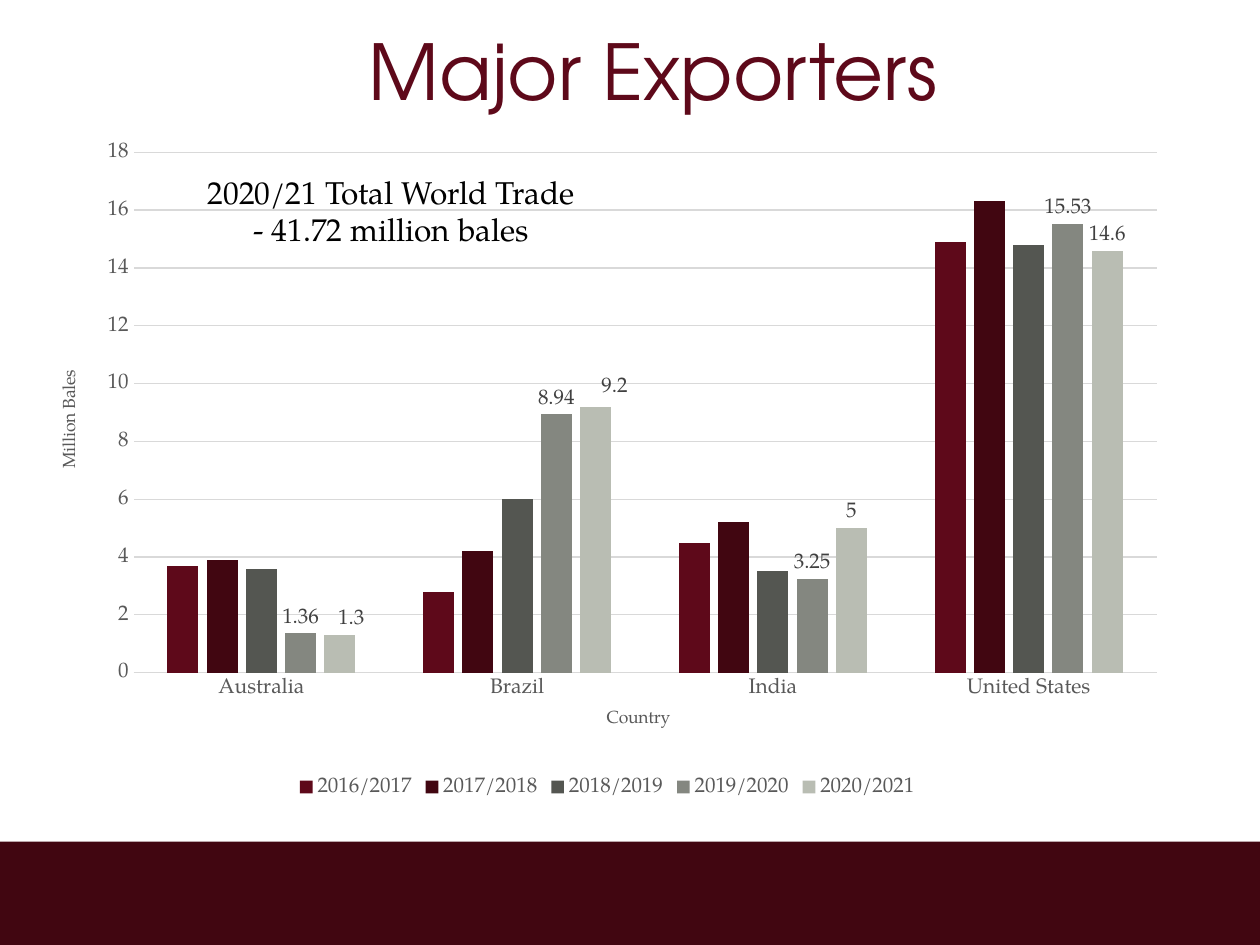
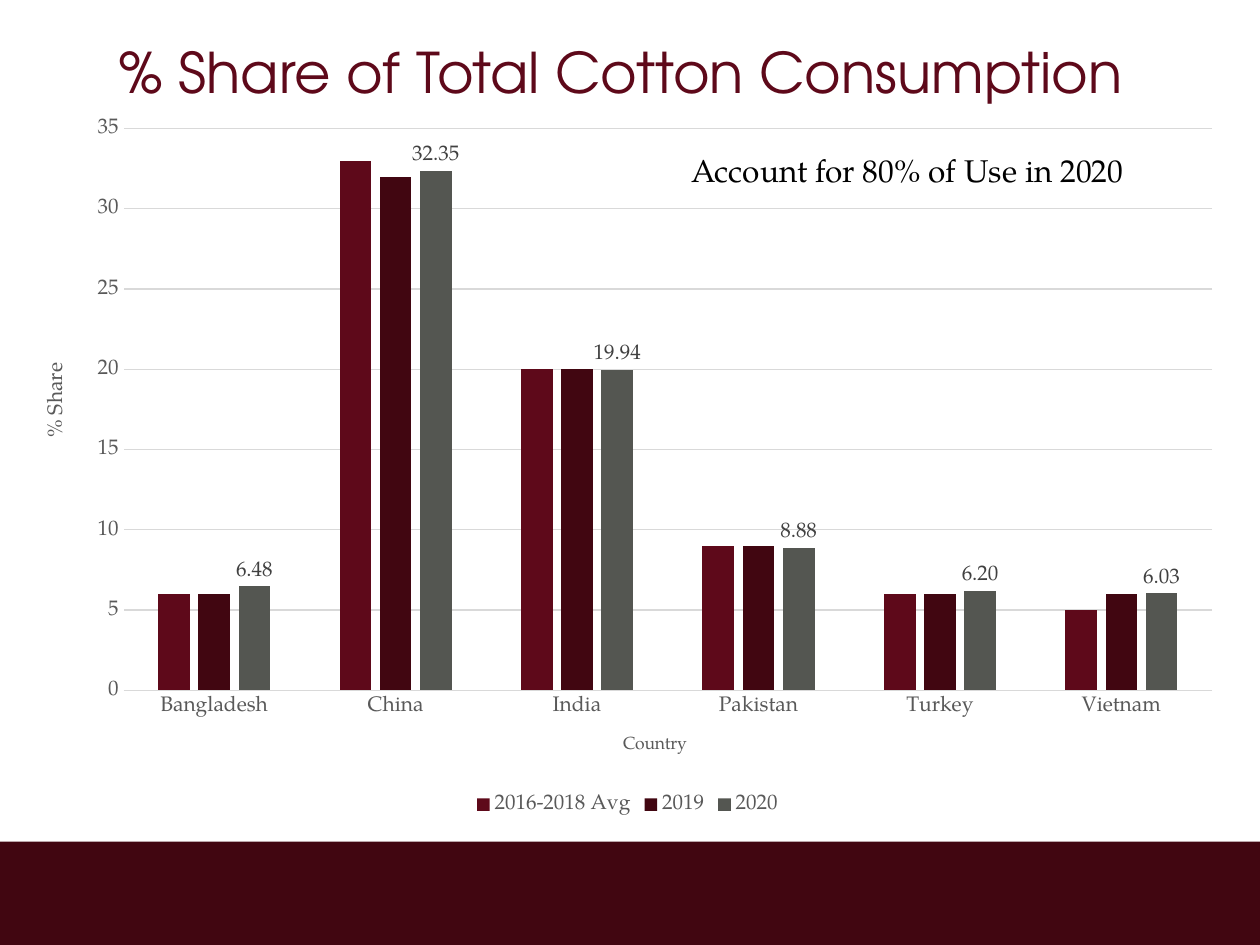
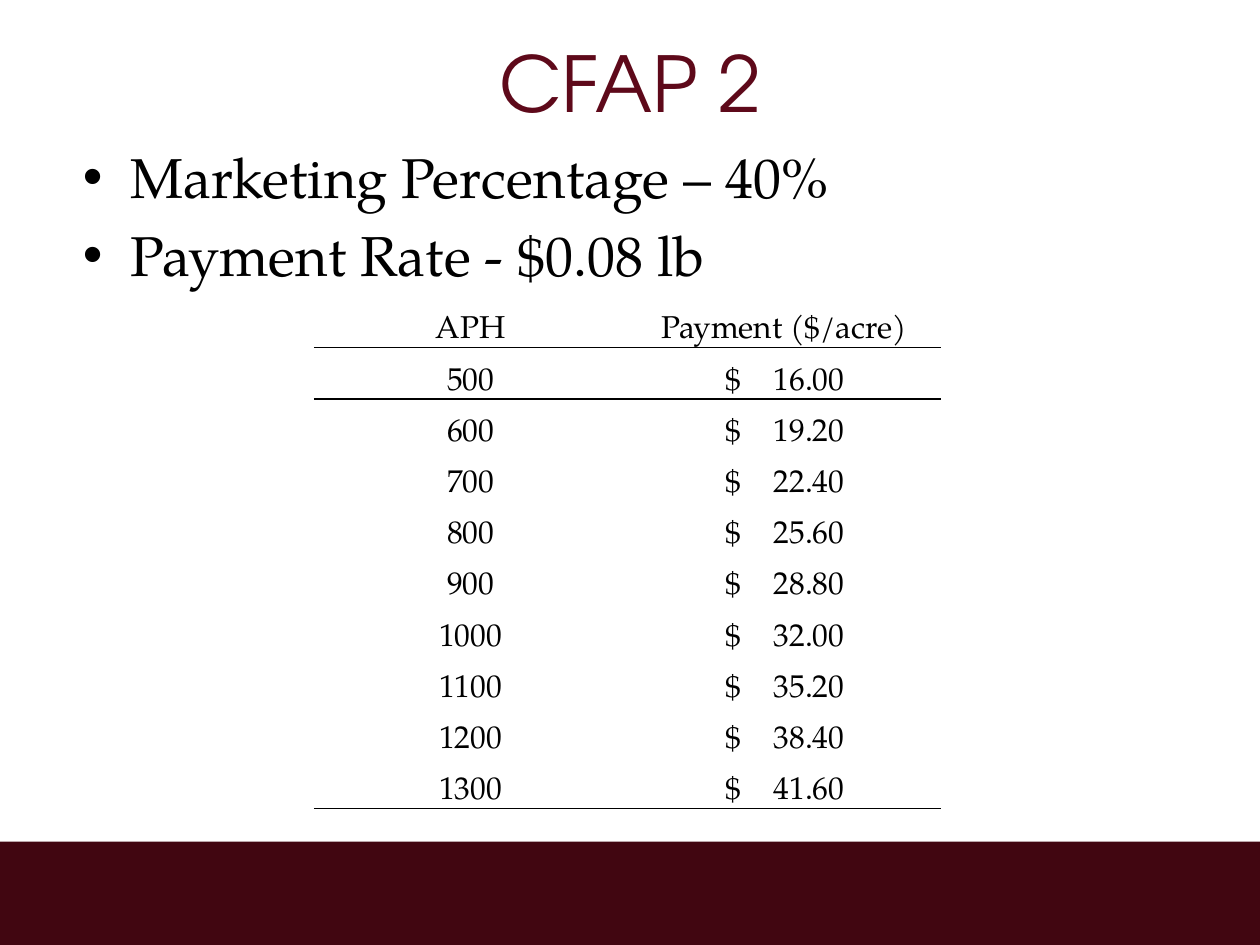
from dataclasses import dataclass

from pptx import Presentation
from pptx.chart.data import CategoryChartData
from pptx.dml.color import RGBColor
from pptx.enum.chart import XL_CHART_TYPE, XL_LABEL_POSITION, XL_LEGEND_POSITION, XL_TICK_MARK
from pptx.enum.shapes import MSO_SHAPE
from pptx.enum.text import MSO_ANCHOR, PP_ALIGN
from pptx.oxml import parse_xml
from pptx.oxml.ns import nsdecls, qn
from pptx.util import Inches, Pt

LEFT, CENTER = PP_ALIGN.LEFT, PP_ALIGN.CENTER
TOP, MIDDLE, BOTTOM = MSO_ANCHOR.TOP, MSO_ANCHOR.MIDDLE, MSO_ANCHOR.BOTTOM
COLUMNS = XL_CHART_TYPE.COLUMN_CLUSTERED
OUTSIDE_END = XL_LABEL_POSITION.OUTSIDE_END
LEGEND_BOTTOM = XL_LEGEND_POSITION.BOTTOM
NO_TICK = XL_TICK_MARK.NONE
RECTANGLE = MSO_SHAPE.RECTANGLE
NO_GRID_STYLE = "{2D5ABB26-0587-4C30-8999-92F81FD0307C}"


@dataclass(frozen=True)
class Theme:
    """Colours, fonts and type sizes shared by the slides."""

    title_font: str = "TeX Gyre Adventor"
    body_font: str = "TeX Gyre Pagella"
    bullet_font: str = "Arial"
    maroon: str = "5E091A"
    band: str = "410611"
    black: str = "000000"
    axis: str = "595959"
    label: str = "404040"
    grid: str = "D9D9D9"
    series: tuple = ("5E091A", "410611", "545651", "848780", "B9BDB3")
    title: int = 44
    long_title: int = 32
    bullet: int = 32
    note: int = 18
    chart: int = 12
    small: int = 10


THEME = Theme()


def apply(obj, **values):
    """Set each named attribute on an object."""
    for name, value in values.items():
        setattr(obj, name, value)


def style_font(font, size, color, name=THEME.body_font):
    """Give a font its face, size and colour."""
    apply(font, name=name, size=Pt(size), bold=False)
    font.color.rgb = RGBColor.from_string(color)


def style_line(line, color):
    """Give a chart line its colour and width."""
    line.color.rgb = RGBColor.from_string(color)
    line.width = Pt(0.75)


def add_text(slide, box, lines, size, color=THEME.black, name=THEME.body_font,
             align=CENTER, anchor=TOP):
    """Add a text box with one paragraph per line and return its paragraphs."""
    tf = slide.shapes.add_textbox(*map(Inches, box)).text_frame
    apply(tf, word_wrap=True, vertical_anchor=anchor)
    for i, line in enumerate(lines):
        p = tf.add_paragraph() if i else tf.paragraphs[0]
        p.alignment = align
        r = p.add_run()
        r.text = line
        style_font(r.font, size, color, name)
    return tf.paragraphs


def add_base(prs, title, box, size=THEME.title):
    """Add a slide with the bottom band and its title."""
    slide = prs.slides.add_slide(prs.slide_layouts[6])
    sp = slide.shapes.add_shape(RECTANGLE, *map(Inches, (0, 6.68, 10, 0.82)))
    sp.shadow.inherit = False
    sp.fill.solid()
    sp.fill.fore_color.rgb = RGBColor.from_string(THEME.band)
    sp.line.fill.background()
    add_text(slide, box, [title], size, THEME.maroon, THEME.title_font, anchor=MIDDLE)
    return slide


def set_layout(parent, index, values, target=""):
    """Place a chart part by fractions of the chart."""
    old = parent.find(qn("c:layout"))
    if old is not None:
        parent.remove(old)
    names = [("x", "y", "w", "h")[i] for i in range(len(values))]
    modes = "".join(f'<c:{n}Mode val="edge"/>' for n in names[:2]) if target else ""
    inner = '<c:layoutTarget val="inner"/>' if target == "inner" else ""
    sizes = "".join(f'<c:{n} val="{v:.4f}"/>' for n, v in zip(names, values))
    parent.insert(index, parse_xml(
        f'<c:layout {nsdecls("c")}><c:manualLayout>{inner}{modes}{sizes}'
        '</c:manualLayout></c:layout>'))


def style_axis(axis, title, size, place, turn):
    """Style an axis and place its title."""
    apply(axis, major_tick_mark=NO_TICK, minor_tick_mark=NO_TICK)
    style_font(axis.tick_labels.font, THEME.chart, THEME.axis)
    tf = axis.axis_title.text_frame
    r = tf.paragraphs[0].add_run()
    r.text = title
    style_font(r.font, size, THEME.axis)
    body = tf._txBody.find(qn("a:bodyPr"))
    body.set("rot", str(turn * 60000))
    body.set("vert", "horz")
    set_layout(axis.axis_title._element, 1, place, "edge")


def add_labels(series, number_format, shifts):
    """Show the values of a series, moving single labels by the given shifts."""
    labels = series.data_labels
    apply(labels, show_value=True, position=OUTSIDE_END,
          number_format=number_format, number_format_is_linked=False)
    style_font(labels.font, THEME.chart, THEME.label)
    for i, shift in enumerate(shifts):
        label = series.points[i].data_label
        label.position = OUTSIDE_END
        style_font(label.font, THEME.chart, THEME.label)
        set_layout(series._element.xpath("c:dLbls/c:dLbl")[i], 1, shift)


def add_columns(slide, box, plot, cats, series, formats, cat_title, val_title,
                top, step, tick_format="General", shifts=()):
    """Add a clustered column chart whose parts sit at inches inside its box."""
    def share(values):
        """Turn inches inside the box into fractions of it."""
        return [v / box[2 + i % 2] for i, v in enumerate(values)]

    data = CategoryChartData()
    data.categories = cats
    for name, values in series.items():
        data.add_series(name, values)
    chart = slide.shapes.add_chart(COLUMNS, *map(Inches, box), data).chart
    apply(chart, has_title=False, has_legend=True)
    style_font(chart.font, THEME.small, THEME.black)
    apply(chart.legend, position=LEGEND_BOTTOM, include_in_layout=False)
    style_font(chart.legend.font, THEME.chart, THEME.axis)

    columns = chart.plots[0]
    apply(columns, gap_width=219, overlap=-27, vary_by_categories=False)
    last = list(series)[-1]
    for s, color in zip(columns.series, THEME.series):
        s.format.fill.solid()
        s.format.fill.fore_color.rgb = RGBColor.from_string(color)
        if s.name in formats:
            add_labels(s, formats[s.name], map(share, shifts) if s.name == last else ())

    cat, val = chart.category_axis, chart.value_axis
    style_axis(cat, cat_title[0], cat_title[1], share(cat_title[2]), 0)
    style_axis(val, val_title[0], val_title[1], share(val_title[2]), -90)
    style_line(cat.format.line, THEME.grid)
    apply(val, minimum_scale=0, maximum_scale=top, major_unit=step, has_major_gridlines=True)
    apply(val.tick_labels, number_format=tick_format, number_format_is_linked=False)
    val.format.line.fill.background()
    style_line(val.major_gridlines.format.line, THEME.grid)
    set_layout(chart._chartSpace.chart.plotArea, 0, share(plot), "inner")


def add_bullets(slide, box, lines):
    """Add a bulleted list."""
    for i, p in enumerate(add_text(slide, box, lines, THEME.bullet, align=LEFT)):
        pPr = p._p.get_or_add_pPr()
        pPr.set("marL", str(Inches(0.38)))
        pPr.set("indent", str(-Inches(0.38)))
        pPr.append(parse_xml(f'<a:buFont {nsdecls("a")} typeface="{THEME.bullet_font}"/>'))
        pPr.append(parse_xml(f'<a:buChar {nsdecls("a")} char="•"/>'))
        if i:
            p.space_before = Pt(0.2 * THEME.bullet)


def add_rule(cell, side):
    """Draw a black rule on one side of a cell."""
    cell._tc.get_or_add_tcPr().insert(0, parse_xml(
        f'<a:{side} {nsdecls("a")} w="{Pt(1)}"><a:solidFill>'
        f'<a:srgbClr val="{THEME.black}"/></a:solidFill></a:{side}>'))


def add_payments(slide, box, header_height, rows, ruled):
    """Add the payment table, with rules below the given rows."""
    tbl = slide.shapes.add_table(len(rows), len(rows[0]), *map(Inches, box)).table
    apply(tbl, first_row=False, horz_banding=False)
    tbl._tbl.tblPr.find(qn("a:tableStyleId")).text = NO_GRID_STYLE
    row_height = (box[3] - header_height) / (len(rows) - 1)
    for i, row in enumerate(rows):
        tbl.rows[i].height = Inches(row_height if i else header_height)
        for j, text in enumerate(row):
            cell = tbl.cell(i, j)
            money = "\t" in text
            apply(cell, vertical_anchor=BOTTOM, margin_left=Inches(0.78 if money else 0.01),
                  margin_right=Inches(0.01), margin_top=Inches(0.01), margin_bottom=0)
            cell.fill.background()
            p = cell.text_frame.paragraphs[0]
            p.alignment = LEFT if money else CENTER
            if money:
                p._p.get_or_add_pPr().append(parse_xml(
                    f'<a:tabLst {nsdecls("a")}><a:tab pos="{Inches(0.38)}" algn="l"/></a:tabLst>'))
            r = p.add_run()
            r.text = text
            style_font(r.font, THEME.note, THEME.black)
            if i in ruled:
                add_rule(cell, "lnB")
            if i - 1 in ruled:
                add_rule(cell, "lnT")


def exporters_slide(prs):
    """Build the slide on major exporters."""
    slide = add_base(prs, "Major Exporters", (2.38, 0.09, 5.61, 0.93))
    add_columns(
        slide, (0.27, 1.02, 9.1, 5.35), (0.79, 0.19, 8.12, 4.13),
        ["Australia", "Brazil", "India", "United States"],
        {"2016/2017": (3.7, 2.8, 4.5, 14.9),
         "2017/2018": (3.9, 4.2, 5.2, 16.3),
         "2018/2019": (3.6, 6, 3.5, 14.8),
         "2019/2020": (1.36, 8.94, 3.25, 15.53),
         "2020/2021": (1.3, 9.2, 5, 14.6)},
        {"2019/2020": "#,##0.00", "2020/2021": "General"},
        ("Country", THEME.small, (4.52, 4.59)),
        ("Million Bales", THEME.small, (0.19, 1.89)),
        18, 2, shifts=((0.09, 0), (0.15, -0.03)))
    add_text(slide, (1.39, 1.32, 3.43, 0.71),
             ["2020/21 Total World Trade", "- 41.72 million bales"], THEME.note)


def consumption_slide(prs):
    """Build the slide on shares of cotton consumption."""
    slide = add_base(prs, "% Share of Total Cotton Consumption",
                     (0.24, 0.18, 9.39, 0.77), THEME.long_title)
    add_columns(
        slide, (0.14, 0.82, 9.68, 5.69), (0.84, 0.2, 8.64, 4.46),
        ["Bangladesh", "China", "India", "Pakistan", "Turkey", "Vietnam"],
        {"2016-2018 Avg": (6, 33, 20, 9, 6, 5),
         "2019": (6, 32, 20, 9, 6, 6),
         "2020": (6.48, 32.35, 19.94, 8.88, 6.2, 6.03)},
        {"2020": "0.00"},
        ("Country", THEME.small, (4.78, 4.99)),
        ("% Share", THEME.chart, (0.18, 2.03)),
        35, 5, "0")
    add_text(slide, (5.39, 1.15, 3.84, 0.4), ["Account for 80% of Use in 2020"],
             THEME.note, align=LEFT)


def payments_slide(prs):
    """Build the slide on programme payments."""
    slide = add_base(prs, "CFAP 2", (2.88, 0.22, 4.25, 0.86))
    add_bullets(slide, (0.56, 1.08, 8.88, 1.26),
                ["Marketing Percentage – 40%", "Payment Rate - $0.08 lb"])
    rows = [("APH", "Payment ($/acre)")]
    rows += [(str(aph), f"$\t{aph * 0.4 * 0.08:.2f}") for aph in range(500, 1400, 100)]
    add_payments(slide, (2.49, 2.23, 4.98, 4.19), 0.53, rows, (0, len(rows) - 1))


def main():
    """Build and save the presentation."""
    prs = Presentation()
    apply(prs, slide_width=Inches(10), slide_height=Inches(7.5))
    for build in (exporters_slide, consumption_slide, payments_slide):
        build(prs)
    prs.save("out.pptx")


if __name__ == "__main__":
    main()
